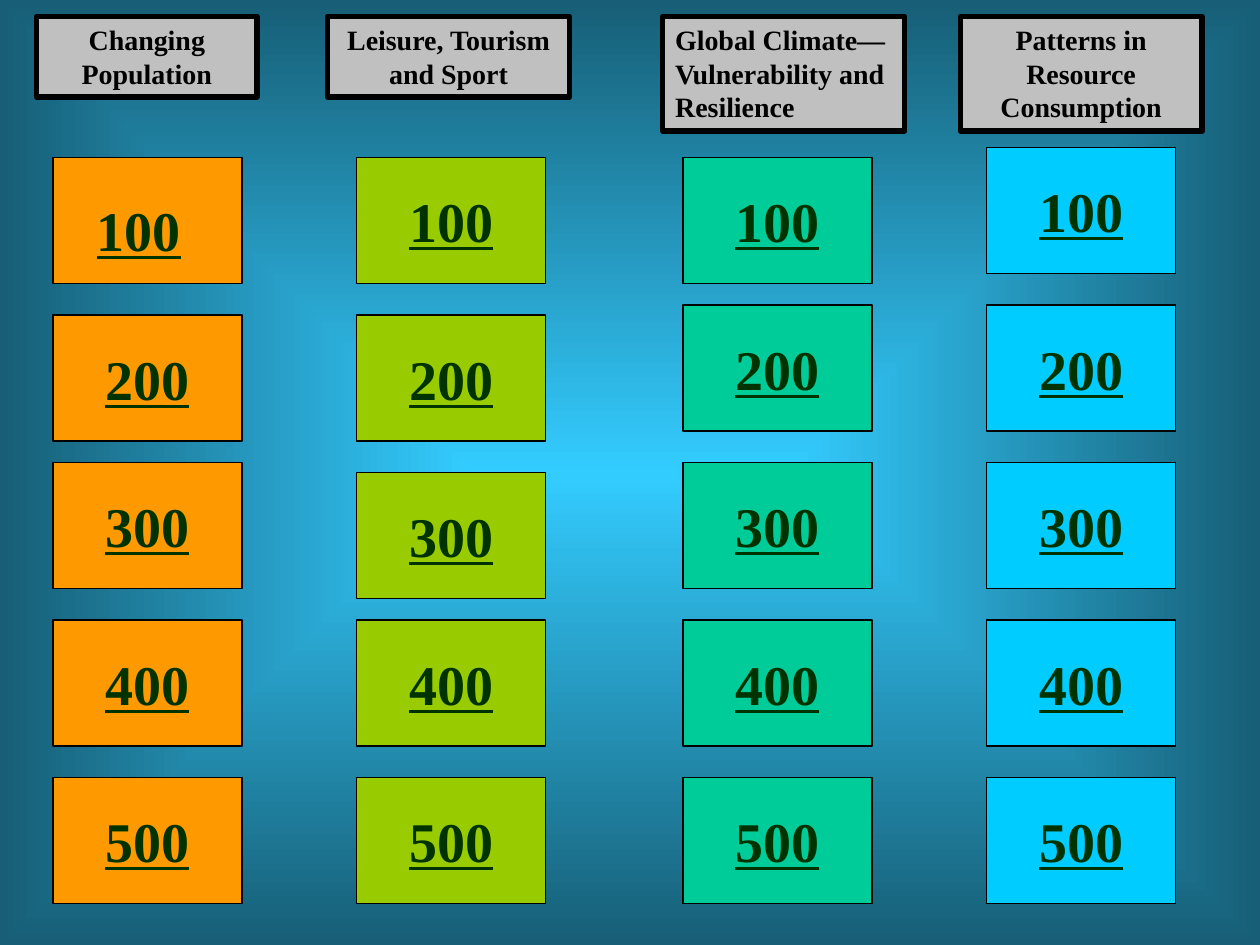
from pptx import Presentation
from pptx.dml.color import RGBColor
from pptx.enum.shapes import MSO_SHAPE as SHAPE
from pptx.enum.text import MSO_ANCHOR as ANCHOR, MSO_AUTO_SIZE as AUTO, PP_ALIGN as ALIGN
from pptx.oxml import parse_xml
from pptx.oxml.ns import nsdecls
from pptx.util import Inches, Pt


def add_box(kind, x, y, w, h, fill, line_width):
    sp = s.shapes.add_shape(kind, Inches(x), Inches(y), Inches(w), Inches(h))
    sp.shadow.inherit = False
    sp.fill.solid()
    sp.fill.fore_color.rgb = RGBColor.from_string(fill)
    sp.line.color.rgb = RGBColor.from_string("000000")
    sp.line.width = Pt(line_width)
    return sp


def set_text(sp, text, size=32, color="003300", underline=True, align=ALIGN.CENTER,
             anchor=ANCHOR.TOP, wrap=True, fit=AUTO.SHAPE_TO_FIT_TEXT):
    tf = sp.text_frame
    tf.word_wrap = wrap
    tf.auto_size = fit
    tf.vertical_anchor = anchor
    p = tf.paragraphs[0]
    p.alignment = align
    r = p.add_run()
    r.text = text
    r.font.name = "Times New Roman"
    r.font.size = Pt(size)
    r.font.bold = True
    r.font.underline = underline
    r.font.color.rgb = RGBColor.from_string(color)


prs = Presentation()
prs.slide_width, prs.slide_height = Inches(10), Inches(7.5)
s = prs.slides.add_slide(prs.slide_layouts[6])

# Gradient that spreads from the centre of the slide
s.element.cSld.insert(0, parse_xml(
    f'<p:bg {nsdecls("p", "a")}><p:bgPr><a:gradFill rotWithShape="0"><a:gsLst>'
    '<a:gs pos="0"><a:srgbClr val="33CCFF"/></a:gs>'
    '<a:gs pos="100000"><a:srgbClr val="175E76"/></a:gs></a:gsLst>'
    '<a:path path="shape"><a:fillToRect l="50000" t="50000" r="50000" b="50000"/></a:path>'
    '</a:gradFill><a:effectLst/></p:bgPr></p:bg>'))

# Category, its left, width, height and alignment; then tile left, colour and tops
columns = [
    ("Changing Population", 0.29, 1.75, 0.64, ALIGN.CENTER,
     0.42, "FF9900", [1.25, 2.5, 3.67, 4.92, 6.17]),
    ("Leisure, Tourism and Sport", 2.6, 1.92, 0.64, ALIGN.CENTER,
     2.83, "99CC00", [1.25, 2.5, 3.75, 4.92, 6.17]),
    ("Global Climate—Vulnerability and Resilience", 5.26, 1.92, 0.91, ALIGN.LEFT,
     5.42, "00CC99", [1.25, 2.42, 3.67, 4.92, 6.17]),
    ("Patterns in Resource Consumption", 7.62, 1.92, 0.91, ALIGN.CENTER,
     7.83, "00CCFF", [1.17, 2.42, 3.67, 4.92, 6.17]),
]

for col, (category, x, w, h, align, tile_x, color, tops) in enumerate(columns):
    header = add_box(SHAPE.RECTANGLE, x, 0.13, w, h, "C0C0C0", 3)
    set_text(header, category, size=16, color="000000", underline=False, align=align)
    for row, top in enumerate(tops):
        tile = add_box(SHAPE.ACTION_BUTTON_CUSTOM, tile_x, top, 1.5, 1, color, 0.75)
        if (col, row) != (0, 0):  # the first tile's value is a separate text box
            set_text(tile, str(100 * (row + 1)), anchor=ANCHOR.MIDDLE, wrap=False,
                     fit=AUTO.NONE)

first_value = s.shapes.add_textbox(Inches(0.67), Inches(1.5), Inches(0.92), Inches(0.63))
set_text(first_value, "100", align=ALIGN.LEFT)

prs.save("out.pptx")
